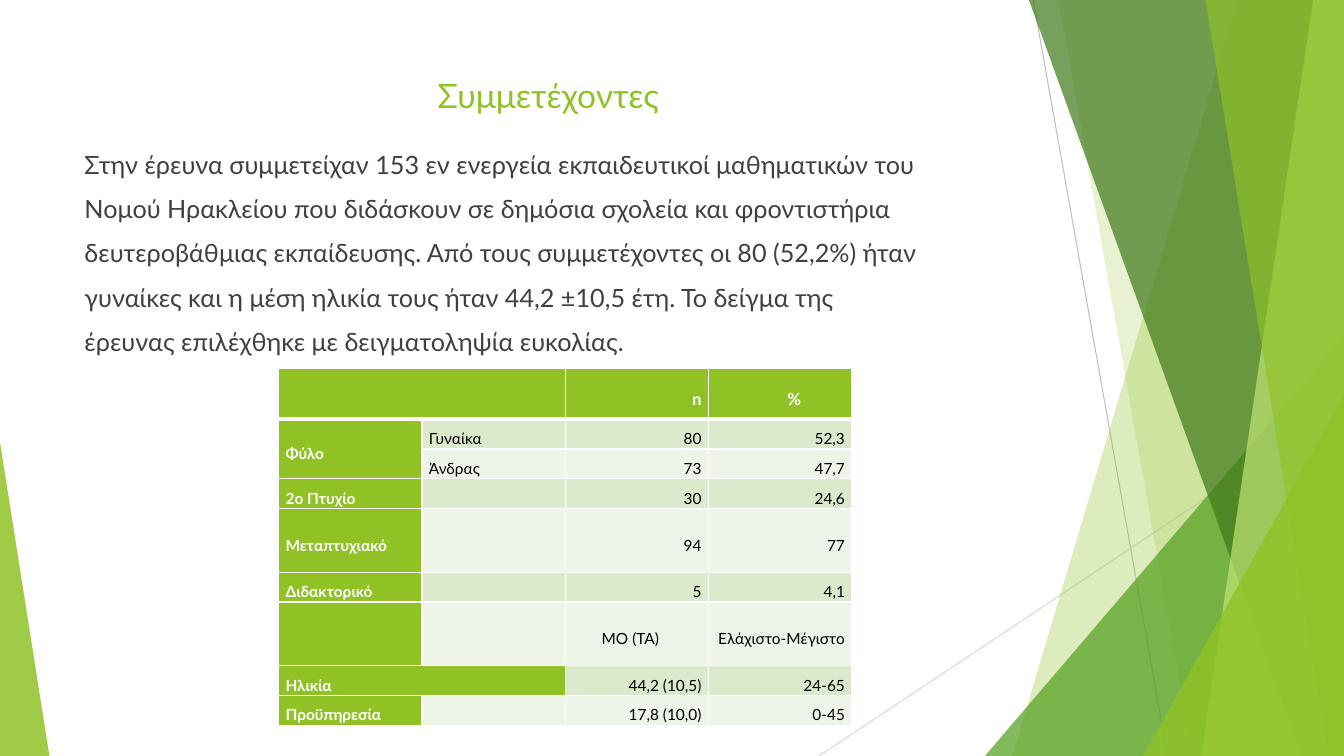
from lxml.etree import SubElement as Sub
from pptx import Presentation
from pptx.dml.color import RGBColor as RGB
from pptx.enum.shapes import MSO_CONNECTOR as Conn, MSO_SHAPE as Form
from pptx.enum.text import MSO_ANCHOR as Anchor, MSO_AUTO_SIZE as Fit, PP_ALIGN as Align
from pptx.oxml import parse_xml
from pptx.oxml.ns import nsdecls, qn
from pptx.util import Pt

WIDE, HIGH = 960, 540
GREEN, WHITE, BLACK, GREY = "90C226", "FFFFFF", "000000", "404040"
BANDS = ["DBE9CD", "EEF4E8"]

LINES = [
    "Στην έρευνα συμμετείχαν 153 εν ενεργεία εκπαιδευτικοί μαθηματικών του",
    "Νομού Ηρακλείου που διδάσκουν σε δημόσια σχολεία και φροντιστήρια",
    "δευτεροβάθμιας εκπαίδευσης. Από τους συμμετέχοντες οι 80 (52,2%) ήταν",
    "γυναίκες και η μέση ηλικία τους ήταν 44,2 ±10,5 έτη. Το δείγμα της",
    "έρευνας επιλέχθηκε με δειγματοληψία ευκολίας.",
]

ROWS = [
    ["", "", "n", "%"],
    ["Φύλο", "Γυναίκα", "80", "52,3"],
    ["", "Άνδρας", "73", "47,7"],
    ["2o Πτυχίο", "", "30", "24,6"],
    ["Μεταπτυχιακό", "", "94", "77"],
    ["Διδακτορικό", "", "5", "4,1"],
    ["", "", "ΜΟ (ΤΑ)", "Ελάχιστο-Μέγιστο"],
    ["Ηλικία", "", "44,2 (10,5)", "24-65"],
    ["Προϋπηρεσία", "", "17,8 (10,0)", "0-45"],
]
LOW, MID, TALL = 21.3, 45.4, 36.5
HEIGHTS = [TALL, LOW, LOW, LOW, MID, LOW, MID, LOW, LOW]
MERGED = [((0, 0), (0, 1)), ((1, 0), (2, 0)), ((7, 0), (7, 1))]
INDENTS = {(0, 3): (Align.CENTER, 25), (6, 2): (Align.LEFT, 26)}


def tint(hue):
    return RGB.from_string(hue)


def paint(shape, hue, alpha):
    shape.shadow.inherit = False
    shape.line.fill.background()
    shape.fill.solid()
    shape.fill.fore_color.rgb = tint(hue)
    mark = shape._element.spPr.find(".//" + qn("a:srgbClr"))
    Sub(mark, qn("a:alpha")).set("val", str(alpha * 1000))


def add_line(slide, start, end, hue):
    line = slide.shapes.add_connector(Conn.STRAIGHT, *map(Pt, start + end))
    line.line.color.rgb = tint(hue)
    line.line.width = Pt(0.75)
    Sub(line._element.spPr, qn("a:effectLst"))


def add_shard(slide, top, foot, hue, alpha):
    path = slide.shapes.build_freeform(Pt(top), 0)
    path.add_line_segments([(Pt(WIDE), 0), (Pt(WIDE), Pt(HIGH)), (Pt(foot), Pt(HIGH))])
    paint(path.convert_to_shape(), hue, alpha)


def add_wedge(slide, left, top, width, peak, hue, alpha):
    box = map(Pt, (left, top, width, HIGH - top))
    wedge = slide.shapes.add_shape(Form.ISOSCELES_TRIANGLE, *box)
    wedge.adjustments[0] = peak
    paint(wedge, hue, alpha)


def style(para, size, hue, bold=False):
    for run in para.runs:
        font = run.font
        font.name, font.size, font.bold = "Lato", Pt(size), bold
        font.color.rgb = tint(hue)


def add_title(slide, text):
    title = slide.shapes.title
    title.left, title.top, title.width, title.height = map(Pt, (53.3, 48.2, 676.8, 38.9))
    frame = title.text_frame
    frame.text = text
    frame.auto_size = Fit.NONE
    frame.vertical_anchor = Anchor.MIDDLE
    frame.paragraphs[0].alignment = Align.CENTER
    style(frame.paragraphs[0], 24, GREEN)


def add_body(slide, lines):
    frame = slide.shapes.add_textbox(*map(Pt, (53.3, 103, 676.8, 370))).text_frame
    frame.word_wrap = True
    frame.text = "\n".join(lines)
    for spot, para in enumerate(frame.paragraphs):
        para.space_before = Pt(10 if spot else 0)
        style(para, 18, GREY)


def add_edges(cell, row):
    props = cell._tc.get_or_add_tcPr()
    thick = {0: "B", 1: "T"}.get(row)
    for spot, side in enumerate("LRTB"):
        width = Pt(3 if side == thick else 1)
        props.insert(spot, parse_xml(
            f'<a:ln{side} {nsdecls("a")} w="{width}"><a:solidFill>'
            f'<a:srgbClr val="{WHITE}"/></a:solidFill></a:ln{side}>'))


def fill_cell(cell, row, col, text):
    head = row == 0 or col == 0
    cell.fill.solid()
    cell.fill.fore_color.rgb = tint(GREEN if head else BANDS[(row - 1) % 2])
    add_edges(cell, row)
    side = Align.RIGHT if col > 1 else Align.LEFT
    align, inset = INDENTS.get((row, col), (side, 5))
    cell.margin_left, cell.margin_right = Pt(inset), Pt(5)
    cell.margin_top = cell.margin_bottom = 0
    cell.vertical_anchor = Anchor.MIDDLE
    para = cell.text_frame.paragraphs[0]
    if text:
        para.text = text
        para.alignment = align
        para.line_spacing = 1.5
        style(para, 11 if row else 12, WHITE if head else BLACK, head)
    else:
        Sub(para._p, qn("a:endParaRPr")).set("sz", "1100")


def add_grid(slide, rows):
    box = map(Pt, (199, 263, 409.6, sum(HEIGHTS)))
    table = slide.shapes.add_table(len(rows), len(rows[0]), *box).table
    table.first_row = table.horz_banding = False
    for col in table.columns:
        col.width = Pt(102.4)
    for row, texts in enumerate(rows):
        table.rows[row].height = Pt(HEIGHTS[row])
        for col, text in enumerate(texts):
            fill_cell(table.cell(row, col), row, col, text)
    for start, end in MERGED:
        table.cell(*start).merge(table.cell(*end))


def add_decor(slide):
    add_line(slide, (738, 0), (834, HIGH), "BFBFBF")
    add_line(slide, (WIDE, 290), (585, HIGH), "D9D9D9")
    add_shard(slide, 884, 723, GREEN, 30)
    add_shard(slide, 756, 852, GREEN, 20)
    add_wedge(slide, 703.5, 240, 256.5, 1, "54A021", 72)
    add_shard(slide, 735, 930, "3F7819", 70)
    add_shard(slide, 938, 858, "C0E474", 70)
    add_shard(slide, 861, 949, GREEN, 65)
    add_wedge(slide, 816.5, 283, 143.5, 1, GREEN, 80)
    add_wedge(slide, 0, 316, 35.3, 0, GREEN, 85)


def main():
    deck = Presentation()
    deck.slide_width, deck.slide_height = Pt(WIDE), Pt(HIGH)
    slide = deck.slides.add_slide(deck.slide_layouts[5])
    add_decor(slide)
    add_title(slide, "Συμμετέχοντες")
    add_body(slide, LINES)
    add_grid(slide, ROWS)
    deck.save("out.pptx")


if __name__ == "__main__":
    main()
